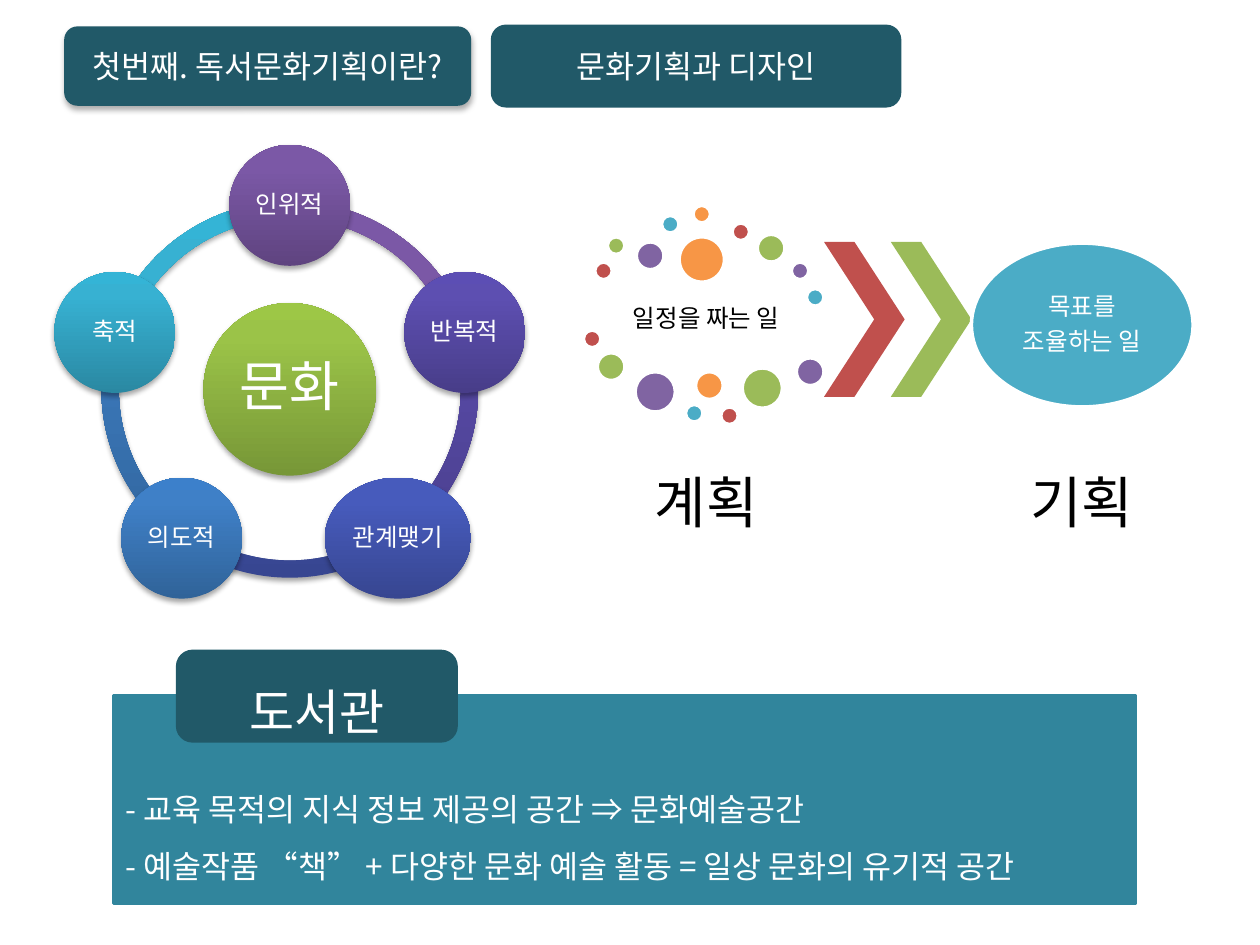
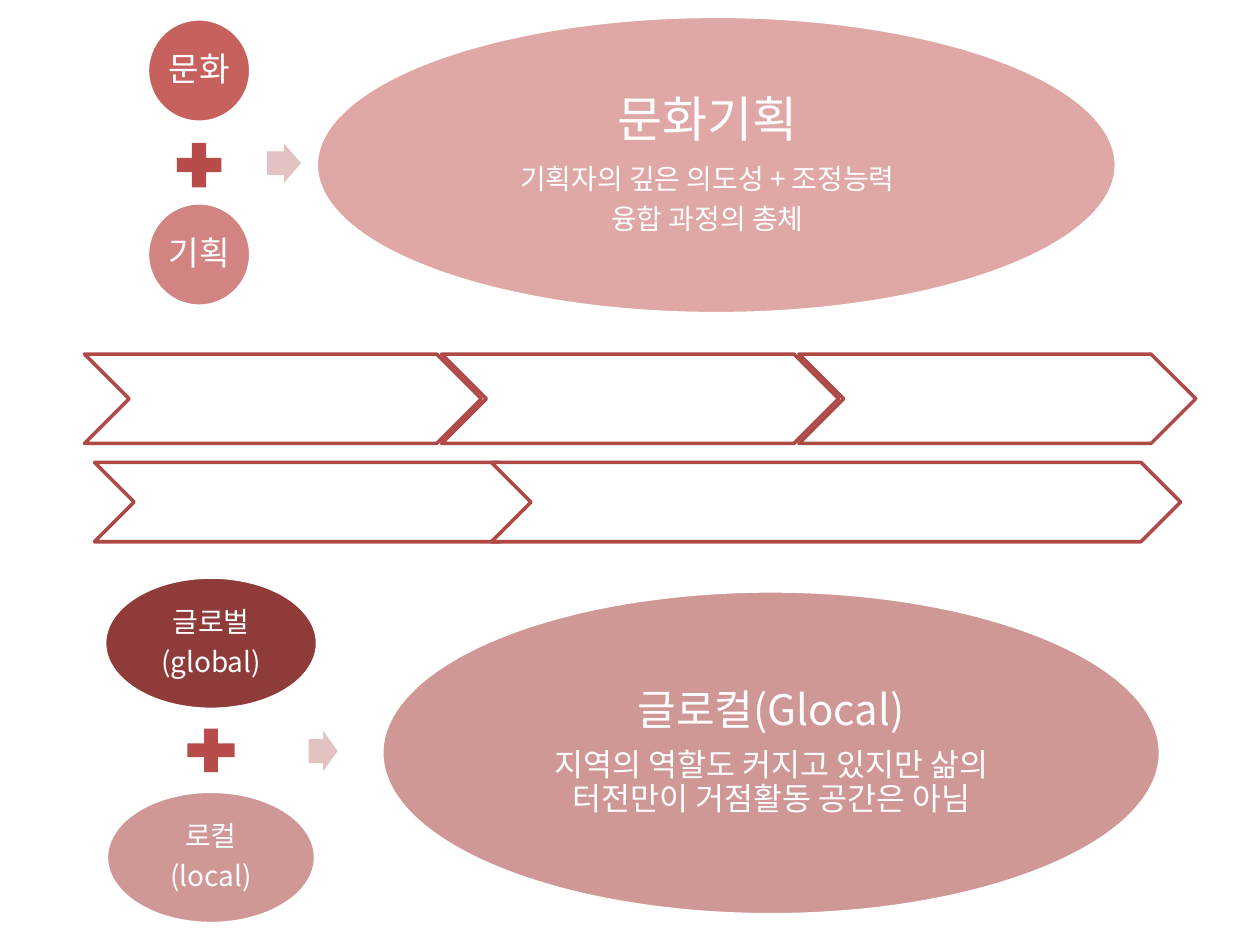
from math import cos, radians, sin
from lxml import etree
from pptx import Presentation
from pptx.dml.color import RGBColor
from pptx.enum.shapes import MSO_SHAPE
from pptx.enum.text import MSO_ANCHOR, PP_ALIGN
from pptx.oxml.ns import qn
from pptx.util import Inches, Pt

RECT, ROUND, OVAL = MSO_SHAPE.RECTANGLE, MSO_SHAPE.ROUNDED_RECTANGLE, MSO_SHAPE.OVAL
ARC, CHEVRON = MSO_SHAPE.BLOCK_ARC, MSO_SHAPE.CHEVRON
PLUS, ARROW = MSO_SHAPE.MATH_PLUS, MSO_SHAPE.RIGHT_ARROW
MIDDLE, CENTER, LEFT = MSO_ANCHOR.MIDDLE, PP_ALIGN.CENTER, PP_ALIGN.LEFT

FONT = "Noto Sans CJK KR"
WIDE, HIGH = 10, 7.5
WHITE, BLACK = "FFFFFF", "000000"
NAVY, TEAL = "215968", "31859C"
RED, GREEN, VIOLET, AQUA, ORANGE = "C0504D", "9BBB59", "8064A2", "4BACC6", "F79646"
BRICK, PINK, ROSE, WINE, EDGE = "B74C4A", "E3C3C2", "CF9796", "8E3B39", "AE4946"
SOFT, HARD = (35, 3.1, 1.8), (32, 3.5, 2.2)

HEADS = [("첫번째. 독서문화기획이란?", None, HARD), ("문화기획과 디자인", NAVY, None)]
HEAD = (0.51, 0.21, 3.23, 0.63)
HEAD_STEP = 3.4

HUB = ("문화", ("779737", "9BC348", "9DC746"))
NODES = [
    ("인위적", 0.96, ("5F4480", "7B58A6", "7C57A8")),
    ("반복적", 0.96, ("483D89", "5D4FB1", "5C4EB4")),
    ("관계맺기", 1.16, ("374691", "475BBC", "455ABF")),
    ("의도적", 0.96, ("306399", "3F80C7", "3C80CB")),
    ("축적", 0.96, ("2A88A2", "37B1D2", "34B4D6")),
]
RING = (2.3, 3.09)
REACH, NODE, BAND = 1.46, 0.96, 2.99

SMALL, MEDIUM, LARGE, HUGE = 0.14, 0.22, 0.32, 0.36
DOTS = [
    (4.72, 2.08, SMALL, RED), (4.82, 1.88, SMALL, GREEN),
    (5.05, 1.92, MEDIUM, VIOLET), (5.25, 1.71, SMALL, AQUA),
    (5.5, 1.63, SMALL, ORANGE), (5.81, 1.77, SMALL, RED),
    (6.01, 1.86, MEDIUM, GREEN), (6.28, 2.08, SMALL, VIOLET),
    (6.4, 2.29, SMALL, AQUA), (5.39, 1.88, HUGE, ORANGE),
    (4.63, 2.62, SMALL, RED), (4.74, 2.8, MEDIUM, GREEN),
    (5.04, 2.95, LARGE, VIOLET), (5.44, 3.21, SMALL, AQUA),
    (5.52, 2.95, MEDIUM, ORANGE), (5.72, 3.23, SMALL, RED),
    (5.89, 2.92, LARGE, GREEN), (6.32, 2.84, MEDIUM, VIOLET),
]
LABELS = [
    ("일정을 짜는 일", 14, (4.73, 2.25, 1.75, 0.58)),
    ("계획", 32, (4.73, 3.47, 1.75, 1.08)),
    ("기획", 32, (7.71, 3.47, 1.75, 1.08)),
]
GOAL = ["목표를", "조율하는 일"]
PLACE = "도서관"
NOTES = [
    "- 교육 목적의 지식 정보 제공의 공간 ⇒ 문화예술공간",
    "- 예술작품 “책” + 다양한 문화 예술 활동 = 일상 문화의 유기적 공간",
]

SUMS = [
    {
        "parts": [
            (["문화"], (1.58, 0.56, 0.82, 0.82), RED, 90),
            (["기획"], (1.58, 2.02, 0.82, 0.82), RED, 70),
        ],
        "size": 19,
        "plus": (1.58, 1.31, 0.48, 0.48),
        "arrow": (2.255, 1.295, 0.27, 0.31),
        "total": (5.685, 1.31, 6.35, 2.36),
        "fill": (RED, 50),
        "text": ["문화기획", "기획자의 깊은 의도성 + 조정능력", "융합 과정의 총체"],
        "sizes": [28, 16, 16],
        "inset": (0.04, 0.04, 0.18, 0.04),
    },
    {
        "parts": [
            (["글로벌", "(global)"], (1.675, 5.105, 1.69, 1.05), WINE, 100),
            (["로컬", "(local)"], (1.675, 6.805, 1.66, 1.05), ROSE, 100),
        ],
        "size": 16,
        "plus": (1.675, 5.955, 0.51, 0.47),
        "arrow": (2.565, 5.96, 0.23, 0.32),
        "total": (6.12, 5.975, 6.18, 2.57),
        "fill": (ROSE, 100),
        "text": ["글로컬(Glocal)", "지역의 역할도 커지고 있지만 삶의 터전만이 거점활동 공간은 아님"],
        "sizes": [24, 18],
        "inset": (0.03,) * 4,
    },
]
ROWS = [
    (2.81, 0.71, [(0.67 + 2.835 * i, 3.15) for i in range(3)]),
    (3.67, 0.63, [(0.75, 3.53), (3.9, 5.47)]),
]


def rgb(code):
    return RGBColor.from_string(code)


def mid(x, y, w, h):
    return x - w / 2, y - h / 2, w, h


def sub(node, tag, **attrs):
    item = etree.SubElement(node, qn("a:" + tag))
    for key, val in attrs.items():
        item.set(key, str(val))
    return item


def shade(shape, stops):
    shape.fill.background()
    props = shape._element.spPr
    grad = etree.Element(qn("a:gradFill"), rotWithShape="1")
    items = sub(grad, "gsLst")
    for pos, code in zip((0, 80, 100), stops):
        sub(sub(items, "gs", pos=pos * 1000), "srgbClr", val=code)
    sub(grad, "lin", ang=270 * 60000, scaled=0)
    props.replace(props.find(qn("a:noFill")), grad)


def cast(shape, alpha, blur, dist):
    glow = sub(shape._element.spPr.find(qn("a:effectLst")), "outerShdw",
               blurRad=Pt(blur), dist=Pt(dist), dir=90 * 60000,
               algn="ctr", rotWithShape=0)
    sub(sub(glow, "srgbClr", val=BLACK), "alpha", val=alpha * 1000)


def draw(slide, kind, box, fill, line=None, alpha=100, shadow=None, adj=()):
    shape = slide.shapes.add_shape(kind, *map(Inches, box))
    for i, val in enumerate(adj):
        shape.adjustments[i] = val
    if isinstance(fill, tuple):
        shade(shape, fill)
    else:
        shape.fill.solid()
        shape.fill.fore_color.rgb = rgb(fill)
        if alpha < 100:
            tint = shape._element.spPr.find(qn("a:solidFill"))[0]
            sub(tint, "alpha", val=alpha * 1000)
    if line:
        shape.line.color.rgb = rgb(line)
        shape.line.width = Pt(2)
    else:
        shape.line.fill.background()
    shape.shadow.inherit = False
    if shadow:
        cast(shape, *shadow)
    return shape


def write(shape, lines, sizes, color=WHITE, inset=(0.02,) * 4,
          align=CENTER, lead=0.9, after=0.35):
    frame = shape.text_frame
    frame.word_wrap = True
    frame.vertical_anchor = MIDDLE
    (frame.margin_left, frame.margin_top,
     frame.margin_right, frame.margin_bottom) = map(Inches, inset)
    frame.text = "\n".join(lines)
    for para, size in zip(frame.paragraphs, sizes):
        para.alignment = align
        para.line_spacing = lead
        para.space_after = Pt(size * after)
        para.font.name = FONT
        para.font.size = Pt(size)
        para.font.color.rgb = rgb(color)
        sub(para.font._element, "ea", typeface=FONT)


def ring(slide):
    turns = [(270 + 72 * i) % 360 for i in range(len(NODES))]
    for (name, wide, fill), turn in reversed(list(zip(NODES, turns))):
        adj = (turn * 0.6, (turn + 72) % 360 * 0.6, 0.046)
        draw(slide, ARC, mid(*RING, BAND, BAND), fill, shadow=SOFT, adj=adj)
    name, fill = HUB
    hub = draw(slide, OVAL, mid(*RING, 1.37, 1.37), fill, shadow=SOFT)
    write(hub, [name], [31], inset=(0.04,) * 4)
    for (name, wide, fill), turn in zip(NODES, turns):
        x = RING[0] + REACH * cos(radians(turn))
        y = RING[1] + REACH * sin(radians(turn))
        node = draw(slide, OVAL, mid(x, y, wide, NODE), fill, shadow=SOFT)
        write(node, [name], [14])


def plan(slide):
    for text, size, box in LABELS:
        label = slide.shapes.add_textbox(*map(Inches, box))
        write(label, [text], [size], BLACK)
    for x, y, size, fill in DOTS:
        draw(slide, OVAL, (x, y, size, size), fill, WHITE)
    for x, fill in ((6.54, RED), (7.07, GREEN)):
        draw(slide, CHEVRON, (x, 1.92, 0.64, 1.23), fill, adj=(0.623,))
    goal = draw(slide, OVAL, (7.71, 1.93, 1.76, 1.3), AQUA, WHITE)
    write(goal, GOAL, [14, 14], inset=(0,) * 4)


def first(slide):
    x, y, w, h = HEAD
    pad = (0.1, 0.05, 0.1, 0.05)
    for i, (text, line, shadow) in enumerate(HEADS):
        head = draw(slide, ROUND, (x + HEAD_STEP * i, y, w, h), NAVY, line, shadow=shadow)
        write(head, [text], [18], inset=pad, lead=1, after=0)
    ring(slide)
    plan(slide)
    panel = draw(slide, RECT, (0.9, 5.52, 8.11, 1.65), TEAL, TEAL)
    write(panel, NOTES, [18, 18], inset=(0.1, 0.5, 0.1, 0.05),
          align=LEFT, lead=1.5, after=0)
    tab = draw(slide, ROUND, (1.41, 5.17, 2.21, 0.71), NAVY, NAVY)
    write(tab, [PLACE], [28], inset=pad, lead=1.5, after=0)


def second(slide):
    for item in SUMS:
        for text, box, fill, alpha in item["parts"]:
            part = draw(slide, OVAL, mid(*box), fill, WHITE, alpha)
            write(part, text, [item["size"]] * len(text))
        draw(slide, PLUS, mid(*item["plus"]), BRICK)
        draw(slide, ARROW, mid(*item["arrow"]), PINK, adj=(0.6, 0.5))
        fill, alpha = item["fill"]
        total = draw(slide, OVAL, mid(*item["total"]), fill, WHITE, alpha)
        write(total, item["text"], item["sizes"], inset=item["inset"])
    for y, h, cells in ROWS:
        for x, w in cells:
            draw(slide, CHEVRON, (x, y, w, h), WHITE, EDGE)


def main():
    deck = Presentation()
    deck.slide_width, deck.slide_height = Inches(WIDE), Inches(HIGH)
    for build in (first, second):
        build(deck.slides.add_slide(deck.slide_layouts[6]))
    deck.save("out.pptx")


if __name__ == "__main__":
    main()
